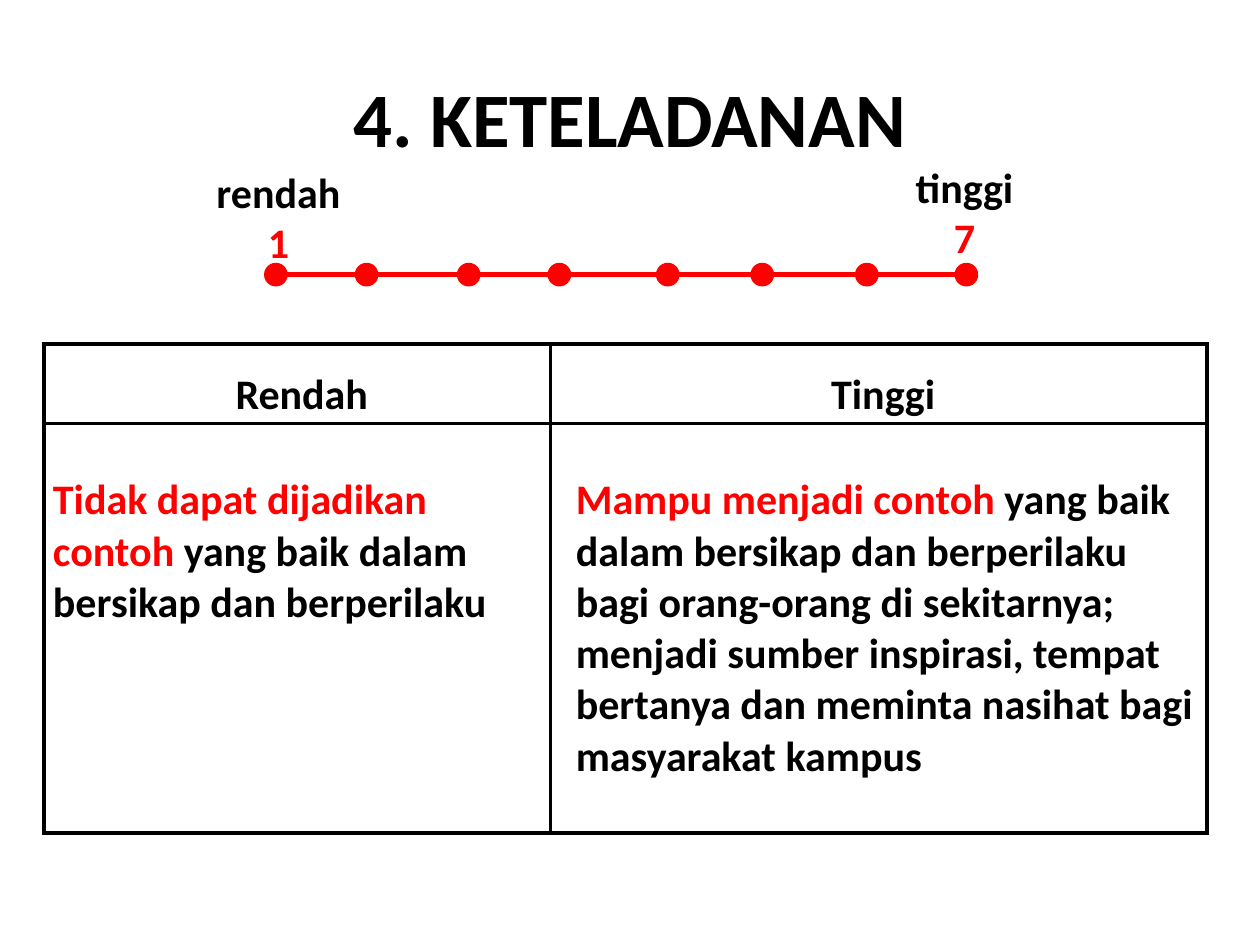
import pptx
import pptx.dml.color
import pptx.enum.shapes
import pptx.enum.text
import pptx.util
from dataclasses import dataclass
from lxml import etree
from pptx.util import Inches

ALIGN = pptx.enum.text.PP_ALIGN
ANCHOR = pptx.enum.text.MSO_ANCHOR


@dataclass
class Theme:
    font: str = "Calibri"
    ink: str = "000000"
    accent: str = "FF0000"
    paper: str = "FFFFFF"
    title: int = 44
    body: int = 24
    border: float = 2.25
    dot_line: float = 2
    scale_line: float = 3


class SlideBuilder:
    def __init__(self, slide, theme):
        self.s = slide
        self.theme = theme

    def color(self, value):
        return pptx.dml.color.RGBColor.from_string(value)

    def add_runs(self, p, runs, size, align=ALIGN.LEFT):
        """Fill a paragraph with (text, colour) runs."""
        p.alignment = align
        for text, color in runs:
            r = p.add_run()
            r.text = text
            r.font.name = self.theme.font
            r.font.size = pptx.util.Pt(size)
            r.font.bold = True
            r.font.color.rgb = self.color(color)

    def text(self, x, y, w, h, lines, size, wrap=True, anchor=ANCHOR.TOP):
        """Add a centred text box with one (text, colour) pair per line."""
        sp = self.s.shapes.add_textbox(Inches(x), Inches(y), Inches(w), Inches(h))
        tf = sp.text_frame
        tf.word_wrap = wrap
        tf.vertical_anchor = anchor
        for i, line in enumerate(lines):
            p = tf.add_paragraph() if i else tf.paragraphs[0]
            self.add_runs(p, [line], size, ALIGN.CENTER)

    def line(self, x1, x2, y):
        sp = self.s.shapes.add_connector(
            pptx.enum.shapes.MSO_CONNECTOR.STRAIGHT,
            Inches(x1), Inches(y), Inches(x2), Inches(y))
        sp.line.color.rgb = self.color(self.theme.accent)
        sp.line.width = pptx.util.Pt(self.theme.scale_line)
        etree.SubElement(sp._element.spPr, pptx.oxml.ns.qn("a:effectLst"))

    def dot(self, x, y, size):
        sp = self.s.shapes.add_shape(
            pptx.enum.shapes.MSO_SHAPE.FLOWCHART_CONNECTOR,
            Inches(x), Inches(y), Inches(size), Inches(size))
        sp.shadow.inherit = False
        sp.fill.solid()
        sp.fill.fore_color.rgb = self.color(self.theme.accent)
        sp.line.color.rgb = self.color(self.theme.accent)
        sp.line.width = pptx.util.Pt(self.theme.dot_line)

    def table(self, x, y, widths, heights):
        frame = self.s.shapes.add_table(
            len(heights), len(widths), Inches(x), Inches(y),
            Inches(sum(widths)), Inches(sum(heights)))
        table = frame.table
        for column, width in zip(table.columns, widths):
            column.width = Inches(width)
        for row, height in zip(table.rows, heights):
            row.height = Inches(height)
        return table

    def cell(self, cell, runs, indent, top=0, align=ALIGN.LEFT, spacing=1.0):
        cell.margin_left = cell.margin_right = cell.margin_bottom = 0
        cell.margin_top = Inches(top)
        p = cell.text_frame.paragraphs[0]
        self.add_runs(p, runs, self.theme.body, align)
        p.line_spacing = spacing
        pPr = p._p.get_or_add_pPr()
        pPr.set("marL", str(Inches(indent)))
        pPr.set("indent", "0")
        self.borders(cell)
        cell.fill.solid()
        cell.fill.fore_color.rgb = self.color(self.theme.paper)

    def borders(self, cell):
        qn = pptx.oxml.ns.qn
        tcPr = cell._tc.get_or_add_tcPr()
        for side in ("a:lnL", "a:lnR", "a:lnT", "a:lnB"):
            ln = etree.SubElement(tcPr, qn(side), w=str(pptx.util.Pt(self.theme.border)))
            fill = etree.SubElement(ln, qn("a:solidFill"))
            etree.SubElement(fill, qn("a:srgbClr"), val=self.theme.ink)


def main():
    prs = pptx.Presentation()
    prs.slide_width, prs.slide_height = Inches(10), Inches(7.5)
    theme = Theme()
    b = SlideBuilder(prs.slides.add_slide(prs.slide_layouts[6]), theme)

    b.text(0.5, 0.3, 9, 1.25, [("4. KETELADANAN", theme.ink)], theme.title,
           anchor=ANCHOR.MIDDLE)

    table = b.table(0.35, 2.73, [4.02, 5.21], [0.63, 3.25])
    for i, heading in enumerate(["Rendah", "Tinggi"]):
        b.cell(table.cell(0, i), [(heading, theme.ink)], 0.07,
               align=ALIGN.CENTER, spacing=1.5)
    descriptions = [
        ("Tidak dapat dijadikan contoh ",
         "yang baik dalam bersikap dan berperilaku", 0.07),
        ("Mampu menjadi contoh ",
         "yang baik dalam bersikap dan berperilaku bagi orang-orang di "
         "sekitarnya; menjadi sumber inspirasi, tempat bertanya dan meminta "
         "nasihat bagi masyarakat kampus", 0.2),
    ]
    for i, (key, rest, indent) in enumerate(descriptions):
        b.cell(table.cell(1, i), [(key, theme.accent), (rest, theme.ink)],
               indent, top=0.41)

    b.line(2.17, 7.62, 2.18)
    for x in (2.11, 2.83, 3.64, 4.36, 5.22, 5.97, 6.8, 7.59):
        b.dot(x, 2.1, 0.16)
    for x, y, w, label, score in ((1.61, 1.27, 1.2, "rendah", "1"),
                                  (7.16, 1.23, 0.99, "tinggi", "7")):
        b.text(x, y, w, 0.91, [(label, theme.ink), (score, theme.accent)],
               theme.body, wrap=False)

    prs.save("out.pptx")


if __name__ == "__main__":
    main()
